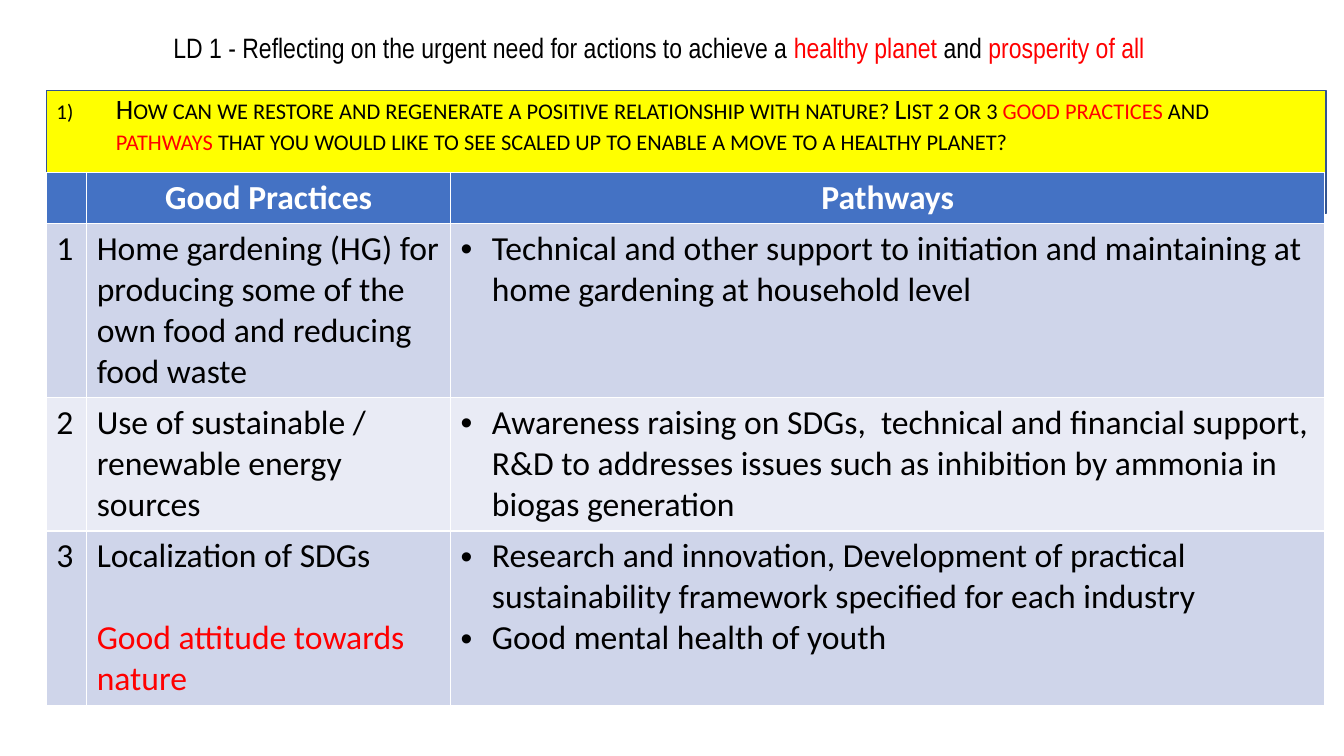
"""Build a slide listing good practices and pathways for a healthy planet."""
from lxml import etree
from pptx import Presentation
from pptx.dml.color import RGBColor
from pptx.enum.shapes import MSO_SHAPE
from pptx.enum.text import MSO_ANCHOR, MSO_AUTO_SIZE, PP_ALIGN
from pptx.oxml.ns import qn
from pptx.util import Inches, Pt

BLACK = RGBColor(0x00, 0x00, 0x00)
WHITE = RGBColor(0xFF, 0xFF, 0xFF)
RED = RGBColor(0xFF, 0x00, 0x00)
YELLOW = RGBColor(0xFF, 0xFF, 0x00)
NAVY = RGBColor(0x32, 0x54, 0x91)
BLUE = RGBColor(0x44, 0x72, 0xC4)
BAND_DARK = RGBColor(0xCF, 0xD5, 0xEA)
BAND_LIGHT = RGBColor(0xE9, 0xEB, 0xF5)
RECTANGLE = MSO_SHAPE.RECTANGLE
MIDDLE, TOP = MSO_ANCHOR.MIDDLE, MSO_ANCHOR.TOP
CENTER, LEFT = PP_ALIGN.CENTER, PP_ALIGN.LEFT
NO_AUTOFIT = MSO_AUTO_SIZE.NONE


def add_run(paragraph, text, size, color=BLACK, font="Calibri", bold=False):
    run = paragraph.add_run()
    run.text = text
    run.font.name = font
    run.font.size = Pt(size)
    run.font.bold = bold
    run.font.color.rgb = color
    return run


def hang_bullet(paragraph, indent, *marks):
    properties = paragraph._p.get_or_add_pPr()
    properties.set("marL", str(Inches(indent)))
    properties.set("indent", str(-Inches(indent)))
    for tag, attributes in marks:
        etree.SubElement(properties, qn(tag), attributes)


prs = Presentation()
prs.slide_width, prs.slide_height = Inches(13.33), Inches(7.5)
slide = prs.slides.add_slide(prs.slide_layouts[1])

banner = slide.shapes.add_shape(
    RECTANGLE, Inches(0.46), Inches(0.9), Inches(12.69), Inches(1.22))
banner.shadow.inherit = False
banner.fill.solid()
banner.fill.fore_color.rgb = YELLOW
banner.line.color.rgb = NAVY
banner.line.width = Pt(1)
slide.shapes._spTree.insert(2, banner._element)

title = slide.shapes.title
question = slide.placeholders[1]
for holder, box, anchor in [
    (title, (0.19, 0.09, 12.69, 0.81), MIDDLE),
    (question, (0.46, 0.9, 11.68, 5.95), TOP),
]:
    holder.left, holder.top, holder.width, holder.height = map(Inches, box)
    holder.text_frame.word_wrap = True
    holder.text_frame.auto_size = NO_AUTOFIT
    holder.text_frame.vertical_anchor = anchor
    holder.text_frame.paragraphs[0].line_spacing = 0.9

heading = title.text_frame.paragraphs[0]
heading.alignment = CENTER
for text, color in [
    ("LD 1 - Reflecting on the urgent need for actions to achieve a ", BLACK),
    ("healthy planet", RED),
    (" and ", BLACK),
    ("prosperity of all", RED),
]:
    add_run(heading, text, 20, color, "Arial Narrow")

prompt = question.text_frame.paragraphs[0]
prompt.space_before = Pt(10)
hang_bullet(prompt, 0.59, ("a:buSzPct", {"val": "75000"}),
            ("a:buFont", {"typeface": "Calibri"}),
            ("a:buAutoNum", {"type": "arabicParenR"}))
for text, color in [
    ("How can we restore and regenerate a positive relationship with nature? "
     "List 2 or 3 ", BLACK),
    ("good practices ", RED),
    ("and ", BLACK),
    ("pathways", RED),
    (" that you would like to see scaled up to enable a move to a healthy "
     "planet?", BLACK),
]:
    add_run(prompt, text, 20, color).font._element.set("cap", "small")

practices = [
    (["Home gardening (HG) for producing some of the own food and reducing "
      "food waste"],
     ["Technical and other support to initiation and maintaining at home "
      "gardening at household level"]),
    (["Use of sustainable / renewable energy sources"],
     ["Awareness raising on SDGs,  technical and financial support, R&D to "
      "addresses issues such as inhibition by ammonia in biogas generation"]),
    (["Localization of SDGs", "Good attitude towards nature"],
     ["Research and innovation, Development of practical sustainability "
      "framework specified for each industry",
      "Good mental health of youth"]),
]
rows = [([], ["Good Practices"], ["Pathways"])]
rows += [([str(number)], *practice)
         for number, practice in enumerate(practices, 1)]
column_widths = [0.4, 3.61, 8.67]
row_heights = [0.5, 1.73, 1.32, 1.73]

table = slide.shapes.add_table(
    len(rows), len(column_widths), Inches(0.46), Inches(1.71),
    Inches(sum(column_widths)), Inches(sum(row_heights))).table
for column, width in zip(table.columns, column_widths):
    column.width = Inches(width)
for row, height in zip(table.rows, row_heights):
    row.height = Inches(height)

for r, entries in enumerate(rows):
    is_header = r == 0
    band = BLUE if is_header else (BAND_DARK if r % 2 else BAND_LIGHT)
    for c, lines in enumerate(entries):
        cell = table.cell(r, c)
        cell.fill.solid()
        cell.fill.fore_color.rgb = band
        for i, line in enumerate(lines):
            frame = cell.text_frame
            paragraph = frame.add_paragraph() if i else frame.paragraphs[0]
            paragraph.alignment = CENTER if is_header else LEFT
            is_extra_practice = c == 1 and i > 0
            if is_extra_practice:
                paragraph.space_before = Pt(29)
            if c == 2 and not is_header:
                hang_bullet(paragraph, 0.31,
                            ("a:buFont", {"typeface": "Arial"}),
                            ("a:buChar", {"char": "•"}))
            color = WHITE if is_header else RED if is_extra_practice else BLACK
            add_run(paragraph, line, 24, color, bold=is_header)

prs.save("out.pptx")
